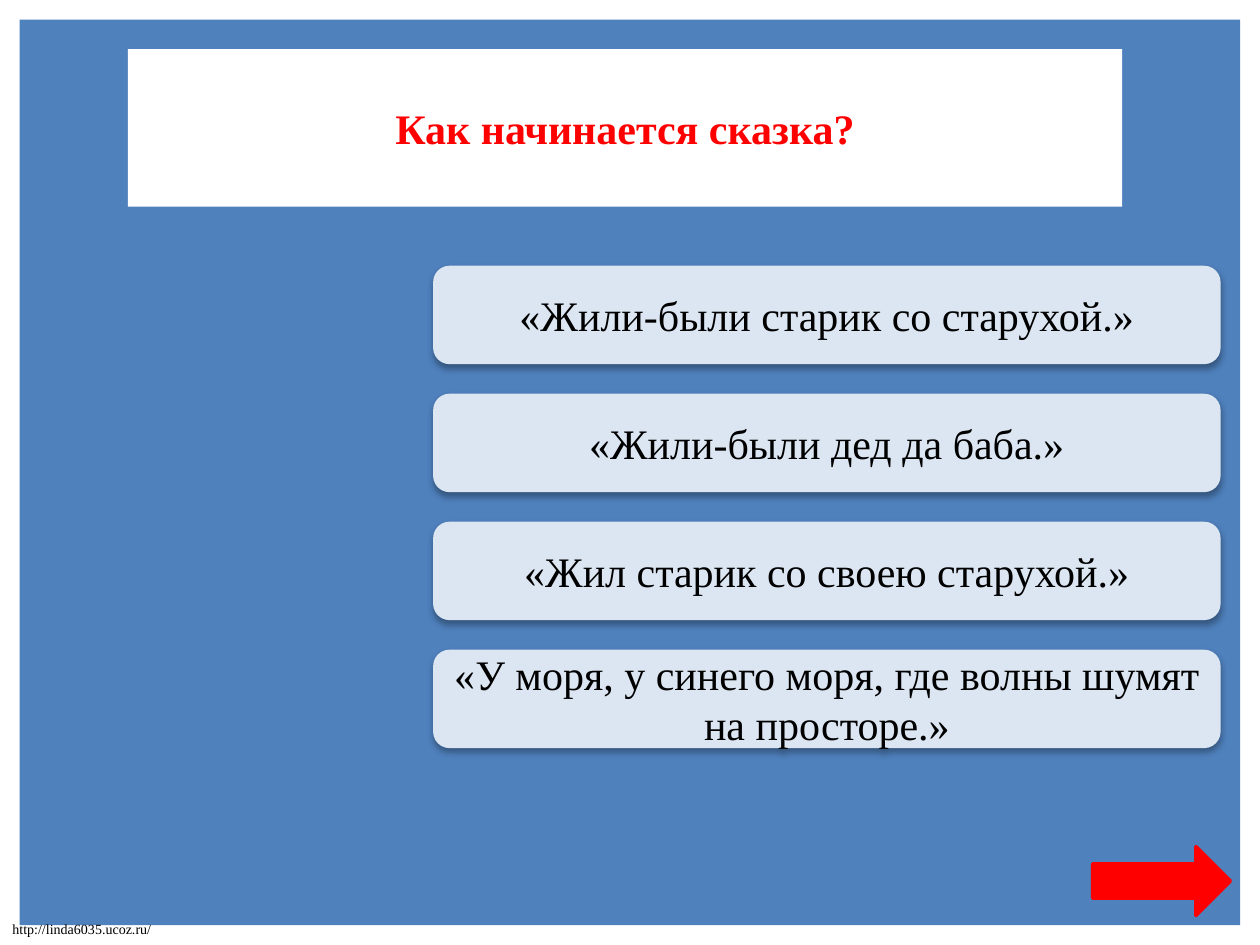
import lxml.etree
import pptx
import pptx.dml.color
import pptx.enum.shapes
import pptx.enum.text
import pptx.oxml
import pptx.oxml.ns
import pptx.util

Pt = pptx.util.Pt
SHAPE = pptx.enum.shapes.MSO_SHAPE
AUTO_SIZE = pptx.enum.text.MSO_AUTO_SIZE
ALIGN = pptx.enum.text.PP_ALIGN
ANCHOR = pptx.enum.text.MSO_ANCHOR

COLOURS = {
    "backdrop": "4F81BD",
    "answer": "DCE6F2",
    "panel": "FFFFFF",
    "accent": "FF0000",
    "text": "000000",
}
ANSWERS = [
    "«Жили-были старик со старухой.»",
    "«Жили-были дед да баба.»",
    "«Жил старик со своею старухой.»",
    "«У моря, у синего моря, где волны шумят на просторе.»",
]
ANSWER_TOP, ANSWER_HEIGHT, ANSWER_GAP = 151.88, 56.25, 16.88


class QuizSlide:
    font_name = "Times New Roman"
    text_size = 24

    def __init__(self, presentation):
        self.slide = presentation.slides.add_slide(presentation.slide_layouts[5])

    def colour(self, name):
        return pptx.dml.color.RGBColor.from_string(COLOURS[name])

    def fill(self, shape, name):
        shape.fill.solid()
        shape.fill.fore_color.rgb = self.colour(name)

    def add_text(self, shape, text, colour="text", size=text_size, bold=False,
                 align=ALIGN.CENTER, wrap=True):
        frame = shape.text_frame
        frame.word_wrap = wrap
        frame.auto_size = AUTO_SIZE.NONE if wrap else AUTO_SIZE.SHAPE_TO_FIT_TEXT
        frame.vertical_anchor = ANCHOR.MIDDLE if wrap else ANCHOR.TOP
        paragraph = frame.paragraphs[0]
        paragraph.alignment = align
        run = paragraph.add_run()
        run.text = text
        run.font.name = self.font_name
        run.font.size = Pt(size)
        run.font.bold = bold
        run.font.color.rgb = self.colour(colour)

    def shape(self, kind, left, top, width, height, fill, line_width=0):
        shape = self.slide.shapes.add_shape(
            kind, Pt(left), Pt(top), Pt(width), Pt(height))
        shape.shadow.inherit = False
        self.fill(shape, fill)
        if line_width:
            shape.line.color.rgb = self.colour(fill)
            shape.line.width = Pt(line_width)
        else:
            shape.line.fill.background()
        return shape

    def title(self, text, left, top, width, height):
        """Turn the title placeholder into a rounded panel in front."""
        title = self.slide.shapes.title
        title.left, title.top = Pt(left), Pt(top)
        title.width, title.height = Pt(width), Pt(height)
        title.element.spPr.append(pptx.oxml.parse_xml(
            f'<a:prstGeom {pptx.oxml.ns.nsdecls("a")} prst="roundRect"><a:avLst/></a:prstGeom>'))
        self.fill(title, "panel")
        self.add_text(title, text, "accent", bold=True)
        title.element.getparent().append(title.element)

    def answer(self, text, left, top, width, height):
        box = self.shape(SHAPE.ROUNDED_RECTANGLE, left, top, width, height, "answer")
        self.add_shadow(box, blur=3.5, distance=2.2, opacity=32)
        self.add_text(box, text)

    def add_shadow(self, shape, blur, distance, opacity):
        qn = pptx.oxml.ns.qn
        effects = shape.element.spPr.find(qn("a:effectLst"))
        shadow = lxml.etree.SubElement(
            effects, qn("a:outerShdw"), blurRad=str(Pt(blur)),
            dist=str(Pt(distance)), dir="5400000", rotWithShape="0")
        colour = lxml.etree.SubElement(shadow, qn("a:srgbClr"), val=COLOURS["text"])
        lxml.etree.SubElement(colour, qn("a:alpha"), val=str(opacity * 1000))

    def footer(self, text, left, top, width, height):
        box = self.slide.shapes.add_textbox(Pt(left), Pt(top), Pt(width), Pt(height))
        self.add_text(box, text, size=8, align=ALIGN.LEFT, wrap=False)


def main():
    presentation = pptx.Presentation()
    presentation.slide_width, presentation.slide_height = Pt(720), Pt(540)
    quiz = QuizSlide(presentation)
    quiz.shape(SHAPE.RECTANGLE, 11.25, 11.25, 697.5, 517.5, "backdrop")
    quiz.footer("http://linda6035.ucoz.ru/", 0, 522.75, 94.3, 17.25)
    quiz.title("Как начинается сказка?", 73.13, 28.13, 568.13, 90)
    for index, text in enumerate(ANSWERS):
        top = ANSWER_TOP + index * (ANSWER_HEIGHT + ANSWER_GAP)
        quiz.answer(text, 247.5, top, 450, ANSWER_HEIGHT)
    quiz.shape(SHAPE.RIGHT_ARROW, 624.38, 483.75, 78.75, 39.38, "accent", line_width=2)
    presentation.save("out.pptx")


if __name__ == "__main__":
    main()
